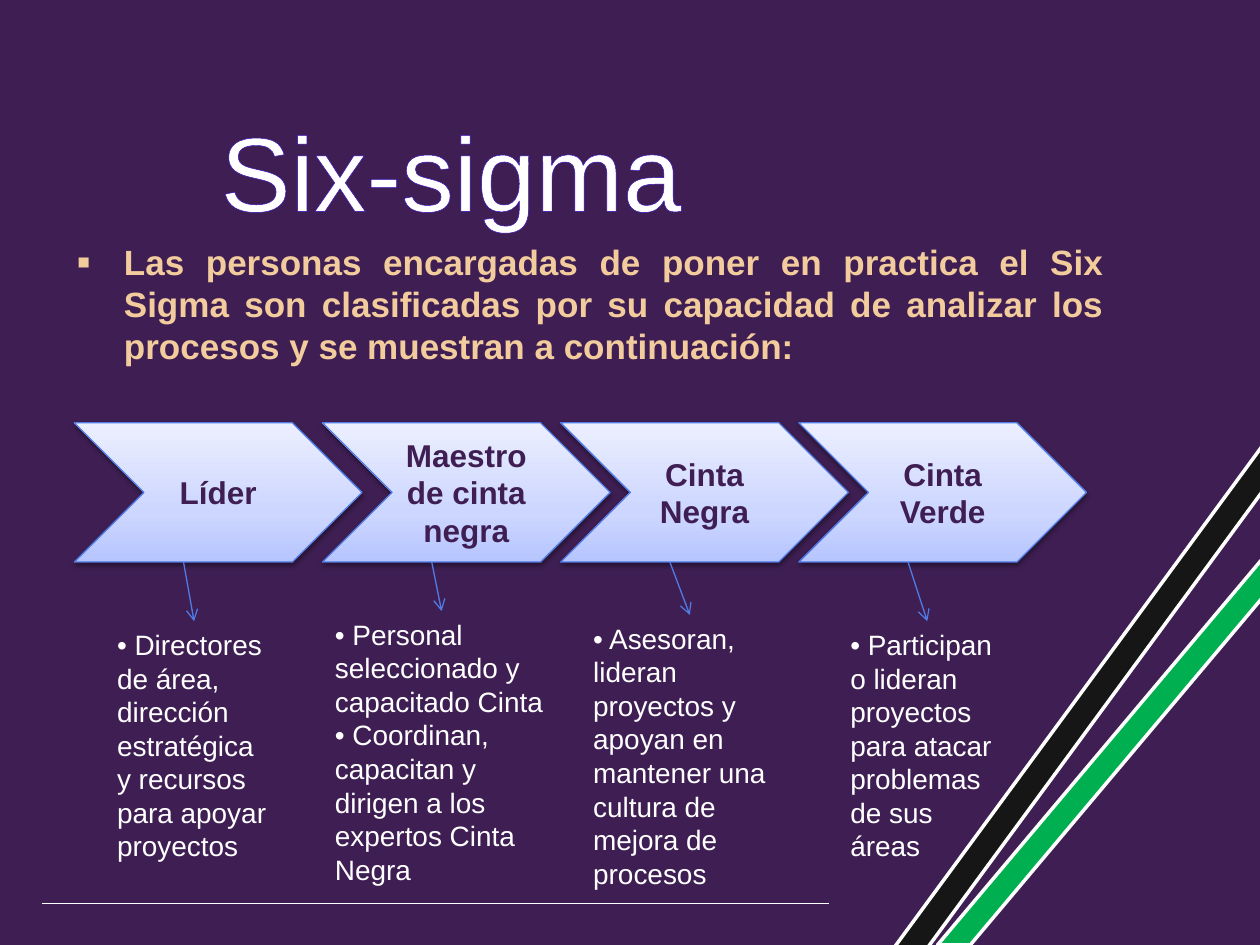
from lxml import etree
from pptx import Presentation
from pptx.dml.color import RGBColor
from pptx.enum.shapes import MSO_CONNECTOR, MSO_SHAPE
from pptx.enum.text import MSO_ANCHOR, MSO_AUTO_SIZE, PP_ALIGN
from pptx.oxml import parse_xml
from pptx.oxml.ns import nsdecls, qn
from pptx.util import Pt

STRIPE, CHEVRON = MSO_SHAPE.DIAGONAL_STRIPE, MSO_SHAPE.CHEVRON
STRAIGHT = MSO_CONNECTOR.STRAIGHT
TOP, MIDDLE = MSO_ANCHOR.TOP, MSO_ANCHOR.MIDDLE
LEFT, CENTER, JUSTIFY = PP_ALIGN.LEFT, PP_ALIGN.CENTER, PP_ALIGN.JUSTIFY
GROW = MSO_AUTO_SIZE.SHAPE_TO_FIT_TEXT
PURPLE, WHITE, SAND, BLUE = "3F1F53", "FFFFFF", "F3CC9D", "507BE5"


def rgb(value):
    return RGBColor.from_string(value)


def write(s, lines, size, color, bold=False, align=LEFT, anchor=TOP):
    tf = s.text_frame
    tf.word_wrap = True
    tf.vertical_anchor = anchor
    for i, line in enumerate(lines):
        p = tf.paragraphs[0] if i == 0 else tf.add_paragraph()
        p.alignment = align
        r = p.add_run()
        r.text = line
        for name, value in {"name": "Arial", "size": Pt(size), "bold": bold}.items():
            setattr(r.font, name, value)
        r.font.color.rgb = rgb(color)
    return tf


prs = Presentation()
prs.slide_width, prs.slide_height = Pt(720), Pt(540)
slide = prs.slides.add_slide(prs.slide_layouts[6])
slide.background.fill.solid()
slide.background.fill.fore_color.rgb = rgb(PURPLE)
shapes = slide.shapes

# Corner stripes
for x, y, w, h, adj, color in [
    (510.5, 252.7, 212.4, 289.4, 0.91, "161616"),
    (535.7, 317.5, 187.2, 222.5, 0.9, "00B050"),
]:
    s = shapes.add_shape(STRIPE, Pt(x), Pt(y), Pt(w), Pt(h))
    s.rotation = 180
    s.adjustments[0] = adj
    s.shadow.inherit = False
    s.fill.solid()
    s.fill.fore_color.rgb = rgb(color)
    s.line.color.rgb = rgb(WHITE)
    s.line.width = Pt(2)

# Introduction with a square bullet
s = shapes.add_textbox(Pt(36.7), Pt(133.9), Pt(601.2), Pt(79.2))
tf = write(s, ["Las personas encargadas de poner en practica el Six Sigma son "
               "clasificadas por su capacidad de analizar los procesos y se "
               "muestran a continuación:"], 20, SAND, True, JUSTIFY)
pPr = tf.paragraphs[0]._p.get_or_add_pPr()
pPr.set("marL", str(Pt(27)))
pPr.set("indent", str(Pt(-27)))
color = etree.SubElement(pPr, qn("a:buClr"))
etree.SubElement(color, qn("a:srgbClr"), val=SAND)
etree.SubElement(pPr, qn("a:buSzPct"), val="115000")
etree.SubElement(pPr, qn("a:buFont"), typeface="Arial")
etree.SubElement(pPr, qn("a:buChar"), char="▪")

# Title with outlined letters
s = shapes.add_textbox(Pt(70.6), Pt(77), Pt(391), Pt(39.6))
tf = write(s, ["Six-sigma "], 60, WHITE, align=CENTER, anchor=MIDDLE)
rPr = tf.paragraphs[0].runs[0]._r.get_or_add_rPr()
rPr.insert(0, parse_xml(
    f'<a:ln {nsdecls("a")} w="{Pt(1.5)}"><a:solidFill>'
    '<a:srgbClr val="310AC2"/></a:solidFill></a:ln>'))

# Roles: chevron (left, label) and description (left, top, width, height, lines)
roles = [
    (42.5, "Líder", 59.8, 355, 102.2, 143.3,
     ["• Directores de área, dirección estratégica y recursos para apoyar proyectos"]),
    (184.3, "Maestro de cinta negra", 184.3, 349.2, 136.1, 162.7,
     ["• Personal seleccionado y capacitado Cinta",
      "• Coordinan, capacitan y dirigen a los expertos Cinta Negra"]),
    (320.4, "Cinta Negra", 331.9, 351.4, 124.6, 162.7,
     ["• Asesoran, lideran proyectos y apoyan en mantener una cultura de "
      "mejora de procesos"]),
    (456.5, "Cinta Verde", 478.8, 355, 102.2, 143.3,
     ["• Participan o lideran proyectos para atacar problemas de sus áreas"]),
]
CHEVRON_TOP, CHEVRON_W, CHEVRON_H = 241.6, 164.4, 79.6
CHEVRON_BOTTOM = CHEVRON_TOP + CHEVRON_H
stops = "".join(
    f'<a:gs pos="{pos}000"><a:srgbClr val="{c}"/></a:gs>'
    for pos, c in [(0, "B7C5FF"), (35, "CCD6FF"), (100, "ECEFFF")])
lines = [(24, 516.2, 474, 516.2, WHITE, 0.5, False)]  # footer rule

for left, label, x, y, w, h, description in roles:
    s = shapes.add_shape(CHEVRON, Pt(left), Pt(CHEVRON_TOP), Pt(CHEVRON_W), Pt(CHEVRON_H))
    s.line.color.rgb = rgb(BLUE)
    s.line.width = Pt(0.75)
    s.shadow.inherit = False
    spPr = s._element.spPr
    spPr.find(qn("a:prstGeom")).addnext(parse_xml(
        f'<a:gradFill {nsdecls("a")} rotWithShape="1"><a:gsLst>{stops}</a:gsLst>'
        '<a:lin ang="16200000" scaled="0"/></a:gradFill>'))
    spPr.find(qn("a:effectLst")).append(parse_xml(
        f'<a:outerShdw {nsdecls("a")} blurRad="{Pt(3.1)}" dist="{Pt(1.6)}" '
        'dir="5400000" rotWithShape="0"><a:srgbClr val="000000">'
        '<a:alpha val="38000"/></a:srgbClr></a:outerShdw>'))
    write(s, [label], 18, PURPLE, True, CENTER, MIDDLE)

    s = shapes.add_textbox(Pt(x), Pt(y), Pt(w), Pt(h))
    write(s, description, 16, WHITE).auto_size = GROW
    lines.append((left + 62.4, CHEVRON_BOTTOM, x + w / 2, y, BLUE, 0.75, True))

# Footer rule and arrows from chevrons to descriptions
for x1, y1, x2, y2, color, width, arrow in lines:
    s = shapes.add_connector(STRAIGHT, Pt(x1), Pt(y1), Pt(x2), Pt(y2))
    s.line.color.rgb = rgb(color)
    s.line.width = Pt(width)
    if arrow:
        etree.SubElement(s.line._get_or_add_ln(), qn("a:tailEnd"), type="arrow")
    etree.SubElement(s._element.spPr, qn("a:effectLst"))

prs.save("out.pptx")
